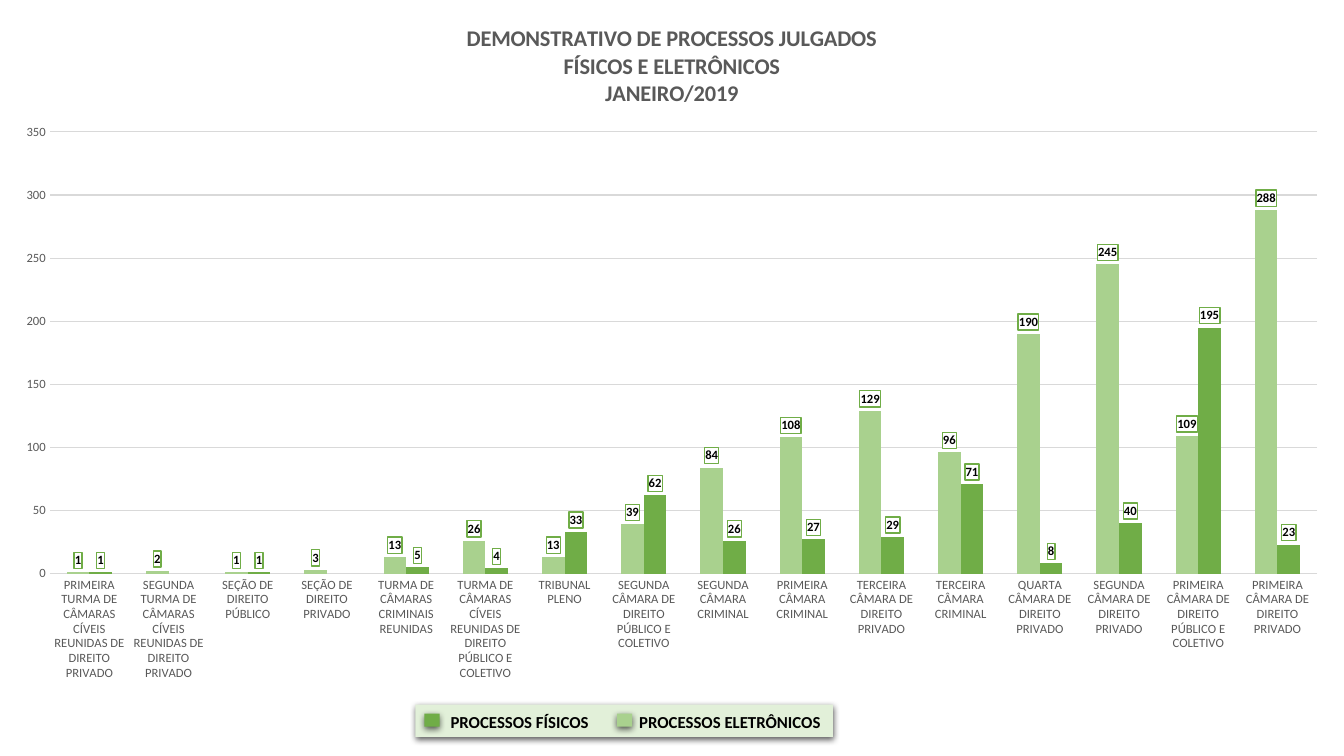
"""Build a slide with a column chart of cases judged in January 2019."""
from lxml.etree import fromstring
from pptx import Presentation
from pptx.chart.data import CategoryChartData
from pptx.dml.color import RGBColor
from pptx.enum.chart import XL_CHART_TYPE, XL_LABEL_POSITION, XL_TICK_MARK
from pptx.enum.shapes import MSO_SHAPE
from pptx.enum.text import MSO_ANCHOR, MSO_AUTO_SIZE
from pptx.oxml.ns import nsdecls, qn
from pptx.util import Inches, Pt

COLORS = {"light": "A9D18E", "dark": "70AD47", "pale": "E2F0D9",
          "black": "000000", "gray": "595959", "grid": "D9D9D9"}
TITLE = ["DEMONSTRATIVO DE PROCESSOS JULGADOS", "FÍSICOS E ELETRÔNICOS", "JANEIRO/2019"]
ROWS = [
    ("PRIMEIRA TURMA DE CÂMARAS CÍVEIS REUNIDAS DE DIREITO PRIVADO", 1, 1),
    ("SEGUNDA TURMA DE CÂMARAS CÍVEIS REUNIDAS DE DIREITO PRIVADO", 2, None),
    ("SEÇÃO DE DIREITO PÚBLICO", 1, 1),
    ("SEÇÃO DE DIREITO PRIVADO", 3, None),
    ("TURMA DE CÂMARAS CRIMINAIS REUNIDAS", 13, 5),
    ("TURMA DE CÂMARAS CÍVEIS REUNIDAS DE DIREITO PÚBLICO E COLETIVO", 26, 4),
    ("TRIBUNAL PLENO", 13, 33),
    ("SEGUNDA CÂMARA DE DIREITO PÚBLICO E COLETIVO", 39, 62),
    ("SEGUNDA CÂMARA CRIMINAL", 84, 26),
    ("PRIMEIRA CÂMARA CRIMINAL", 108, 27),
    ("TERCEIRA CÂMARA DE DIREITO PRIVADO", 129, 29),
    ("TERCEIRA CÂMARA CRIMINAL", 96, 71),
    ("QUARTA CÂMARA DE DIREITO PRIVADO", 190, 8),
    ("SEGUNDA CÂMARA DE DIREITO PRIVADO", 245, 40),
    ("PRIMEIRA CÂMARA DE DIREITO PÚBLICO E COLETIVO", 109, 195),
    ("PRIMEIRA CÂMARA DE DIREITO PRIVADO", 288, 23),
]
SERIES = [("Series 1", "light"), ("Series 2", "dark")]
LEGEND = [("PROCESSOS FÍSICOS", "dark", 4.21, 4.37, 1.59),
          ("PROCESSOS ELETRÔNICOS", "light", 6.12, 6.24, 2.02)]
FONTS = {
    "title": {"size": Pt(16), "bold": True, "name": "Calibri"},
    "axis": {"size": Pt(9), "bold": False, "name": "Calibri"},
    "label": {"size": Pt(9), "bold": True, "name": "Calibri"},
    "legend": {"size": Pt(12), "bold": True, "name": "Calibri"},
}


def rgb(key):
    return RGBColor.from_string(COLORS[key])


def style(font, kind, color):
    for name, value in FONTS[kind].items():
        setattr(font, name, value)
    font.color.rgb = rgb(color)


def add_box(slide, color, *place):
    box = slide.shapes.add_shape(MSO_SHAPE.RECTANGLE, *map(Inches, place))
    box.fill.solid()
    box.fill.fore_color.rgb = rgb(color)
    box.line.fill.background()
    box.shadow.inherit = False
    box._element.spPr.find(qn("a:effectLst")).append(fromstring(
        f'<a:outerShdw {nsdecls("a")} blurRad="57150" dist="19050" dir="5400000" '
        'algn="ctr" rotWithShape="0"><a:srgbClr val="000000">'
        '<a:alpha val="63000"/></a:srgbClr></a:outerShdw>'))


def set_layout(parent, index, target, **spots):
    old = parent.find(qn("c:layout"))
    if old is not None:
        parent.remove(old)
    modes = "".join(f'<c:{key}Mode val="edge"/>' for key in "xy")
    sizes = "".join(f'<c:{key} val="{value}"/>' for key, value in spots.items())
    parent.insert(index, fromstring(
        f'<c:layout {nsdecls("c")}><c:manualLayout>{target}{modes}{sizes}'
        '</c:manualLayout></c:layout>'))


def add_legend(slide):
    add_box(slide, "pale", 4.12, 6.99, 4.14, 0.32)
    for text, color, key_x, text_x, width in LEGEND:
        add_box(slide, color, key_x, 7.08, 0.15, 0.13)
        box = slide.shapes.add_textbox(*map(Inches, (text_x, 7.01, width, 0.3)))
        frame = box.text_frame
        frame.word_wrap = False
        frame.auto_size = MSO_AUTO_SIZE.SHAPE_TO_FIT_TEXT
        frame.vertical_anchor = MSO_ANCHOR.TOP
        run = frame.paragraphs[0].add_run()
        run.text = text
        style(run.font, "legend", "black")


def add_title(chart):
    frame = chart.chart_title.text_frame
    for i, text in enumerate(TITLE):
        line = frame.add_paragraph() if i else frame.paragraphs[0]
        run = line.add_run()
        run.text = text
        style(run.font, "title", "gray")
    chart.chart_title.include_in_layout = False
    set_layout(chart.chart_title._element, 1, "", x=0.345, y=0.03)


def format_axes(chart):
    cats, vals = chart.category_axis, chart.value_axis
    for axis in (cats, vals):
        axis.major_tick_mark = axis.minor_tick_mark = XL_TICK_MARK.NONE
        style(axis.tick_labels.font, "axis", "gray")
    cats.has_major_gridlines = False
    for line, width in ((cats.format.line, 1), (vals.major_gridlines.format.line, 0.75)):
        line.color.rgb = rgb("grid")
        line.width = Pt(width)
    vals.format.line.fill.background()
    vals.minimum_scale, vals.maximum_scale, vals.major_unit = 0, 350, 50
    vals.tick_labels.number_format = "#,##0"
    vals.tick_labels.number_format_is_linked = False


def format_series(series, color):
    series.format.fill.solid()
    series.format.fill.fore_color.rgb = rgb(color)
    series.invert_if_negative = False
    labels = series.data_labels
    labels.show_value = True
    labels.position = XL_LABEL_POSITION.OUTSIDE_END
    style(labels.font, "label", "black")
    labels._element.find(qn("c:txPr")).addprevious(fromstring(
        f'<c:spPr {nsdecls("c", "a")}><a:solidFill><a:srgbClr val="FFFFFF"/></a:solidFill>'
        f'<a:ln w="12700"><a:solidFill><a:srgbClr val="{COLORS["dark"]}"/></a:solidFill>'
        '</a:ln></c:spPr>'))


def add_graph(slide):
    names, *values = zip(*ROWS)
    data = CategoryChartData()
    data.categories = names
    for (name, _), column in zip(SERIES, values):
        data.add_series(name, column)
    place = map(Inches, (0, 0, 13.33, 6.89))
    chart = slide.shapes.add_chart(XL_CHART_TYPE.COLUMN_CLUSTERED, *place, data).chart
    chart.has_legend = False
    chart.font.size = Pt(10)
    chart.font.name = "Calibri"
    plot = chart.plots[0]
    plot.vary_by_categories = False
    plot.gap_width, plot.overlap = 150, 0
    for series, (_, color) in zip(plot.series, SERIES):
        format_series(series, color)
    format_axes(chart)
    add_title(chart)
    area = chart._chartSpace.find(".//" + qn("c:plotArea"))
    set_layout(area, 0, '<c:layoutTarget val="inner"/>', x=0.037, y=0.19, w=0.943, h=0.636)


def main():
    deck = Presentation()
    deck.slide_width, deck.slide_height = Inches(13.33), Inches(7.5)
    slide = deck.slides.add_slide(deck.slide_layouts[6])
    add_legend(slide)
    add_graph(slide)
    deck.save("out.pptx")


if __name__ == "__main__":
    main()
